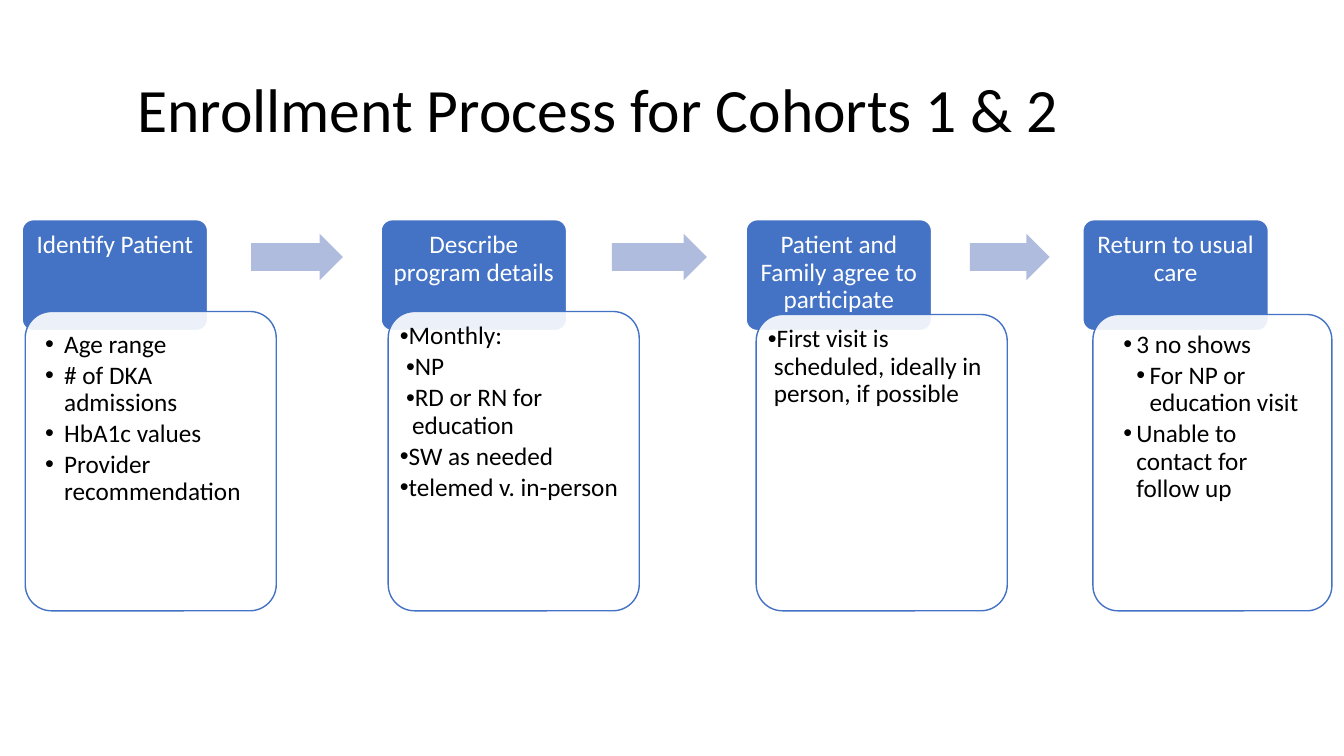
"""Builds the enrollment process slide: four step tabs with detail cards and arrows between them."""
from lxml.etree import SubElement
from pptx import Presentation
from pptx.dml.color import RGBColor
from pptx.enum.shapes import MSO_SHAPE
from pptx.enum.text import MSO_ANCHOR, PP_ALIGN
from pptx.oxml.ns import qn
from pptx.util import Pt

PX = 9144
COLORS = {"blue": "4472C4", "pale": "B0BCDE", "white": "FFFFFF", "black": "000000"}
TAB_TOP, TAB_WIDTH, TAB_HEIGHT = 218, 184, 110
ARROW_TOP, ARROW_HEIGHT = 232, 46
CARD_BOTTOM = 606

STEPS = [
    {"tab": (22, "Identify Patient"), "card": (25, 309, 249), "margin": 12, "indent": 19,
     "items": [(1, "Age range"), (1, "# of DKA admissions"), (1, "HbA1c values"),
               (1, "Provider recommendation")],
     "arrow": (249, 91)},
    {"tab": (378, "Describe program details"), "card": (385, 309, 249), "margin": 4, "indent": 6,
     "items": [(1, "Monthly:"), (2, "NP"), (2, "RD or RN for education"),
               (1, "SW as needed"), (1, "telemed v. in-person")],
     "arrow": (607, 94)},
    {"tab": (740, "Patient and Family agree to participate"), "card": (750, 312, 249),
     "margin": 4, "indent": 6,
     "items": [(1, "First visit is scheduled, ideally in person, if possible")],
     "arrow": (962, 79)},
    {"tab": (1074, "Return to usual care"), "card": (1084, 312, 237), "margin": 10, "indent": 13,
     "items": [(2, "3 no shows"), (3, "For NP or education visit"),
               (2, "Unable to contact for follow up")],
     "arrow": None},
]


def add_block(page, preset, bounds, adjustments, fill, line=None, margins=(0, 0, 0, 0)):
    box = page.shapes.add_shape(preset, *(value * PX for value in bounds))
    box.shadow.inherit = False
    for index, value in enumerate(adjustments):
        box.adjustments[index] = value
    box.fill.solid()
    box.fill.fore_color.rgb = RGBColor.from_string(COLORS[fill])
    if line:
        box.line.color.rgb = RGBColor.from_string(COLORS[line])
        box.line.width = Pt(1)
    else:
        box.line.fill.background()
    frame = box.text_frame
    frame.word_wrap = True
    frame.vertical_anchor = MSO_ANCHOR.TOP
    for side, value in zip(("left", "top", "right", "bottom"), margins):
        setattr(frame, f"margin_{side}", value * PX)
    return box


def write_para(para, text, size, color, formats):
    for name, value in formats.items():
        setattr(para, name, value)
    span = para.add_run()
    span.text = text
    for name, value in {"name": "Calibri", "size": Pt(size)}.items():
        setattr(span.font, name, value)
    span.font.color.rgb = RGBColor.from_string(COLORS[color])


deck = Presentation()
deck.slide_width, deck.slide_height = 1333 * PX, 750 * PX
page = deck.slides.add_slide(deck.slide_layouts[5])

title = page.shapes.title
for name, value in {"left": 126, "top": 39, "width": 1150, "height": 145}.items():
    setattr(title, name, value * PX)
title.text_frame.vertical_anchor = MSO_ANCHOR.MIDDLE
write_para(title.text_frame.paragraphs[0], "Enrollment Process for Cohorts 1 & 2", 44, "black",
           {"alignment": PP_ALIGN.LEFT, "line_spacing": 0.9})

for step in STEPS:
    tab_left, heading = step["tab"]
    tab = add_block(page, MSO_SHAPE.ROUNDED_RECTANGLE,
                    (tab_left, TAB_TOP, TAB_WIDTH, TAB_HEIGHT),
                    [0.1], "blue", "white", (9, 9, 9, 40))
    write_para(tab.text_frame.paragraphs[0], heading, 18, "white",
               {"alignment": PP_ALIGN.CENTER, "line_spacing": 0.9, "space_after": Pt(6.3)})

    card_left, card_top, card_width = step["card"]
    card = add_block(page, MSO_SHAPE.ROUNDED_RECTANGLE,
                     (card_left, card_top, card_width, CARD_BOTTOM - card_top),
                     [0.105], "white", "blue", [step["margin"]] * 4)
    fill_color = card.fill._xPr.find(qn("a:solidFill"))[0]
    SubElement(fill_color, qn("a:alpha"), val="90000")
    frame = card.text_frame
    for number, (level, text) in enumerate(step["items"]):
        para = frame.add_paragraph() if number else frame.paragraphs[0]
        write_para(para, text, 18, "black",
                   {"alignment": PP_ALIGN.LEFT, "level": level, "line_spacing": 0.9,
                    "space_after": Pt(2.7)})
        properties = para._p.get_or_add_pPr()
        properties.set("marL", str(step["indent"] * level * PX))
        properties.set("indent", str(-step["indent"] * PX))
        SubElement(properties, qn("a:buFont"), typeface="Arial")
        SubElement(properties, qn("a:buChar"), char="•")

    if step["arrow"]:
        arrow_left, arrow_width = step["arrow"]
        add_block(page, MSO_SHAPE.RIGHT_ARROW,
                  (arrow_left, ARROW_TOP, arrow_width, ARROW_HEIGHT), [0.6, 0.5], "pale")

deck.save("out.pptx")
